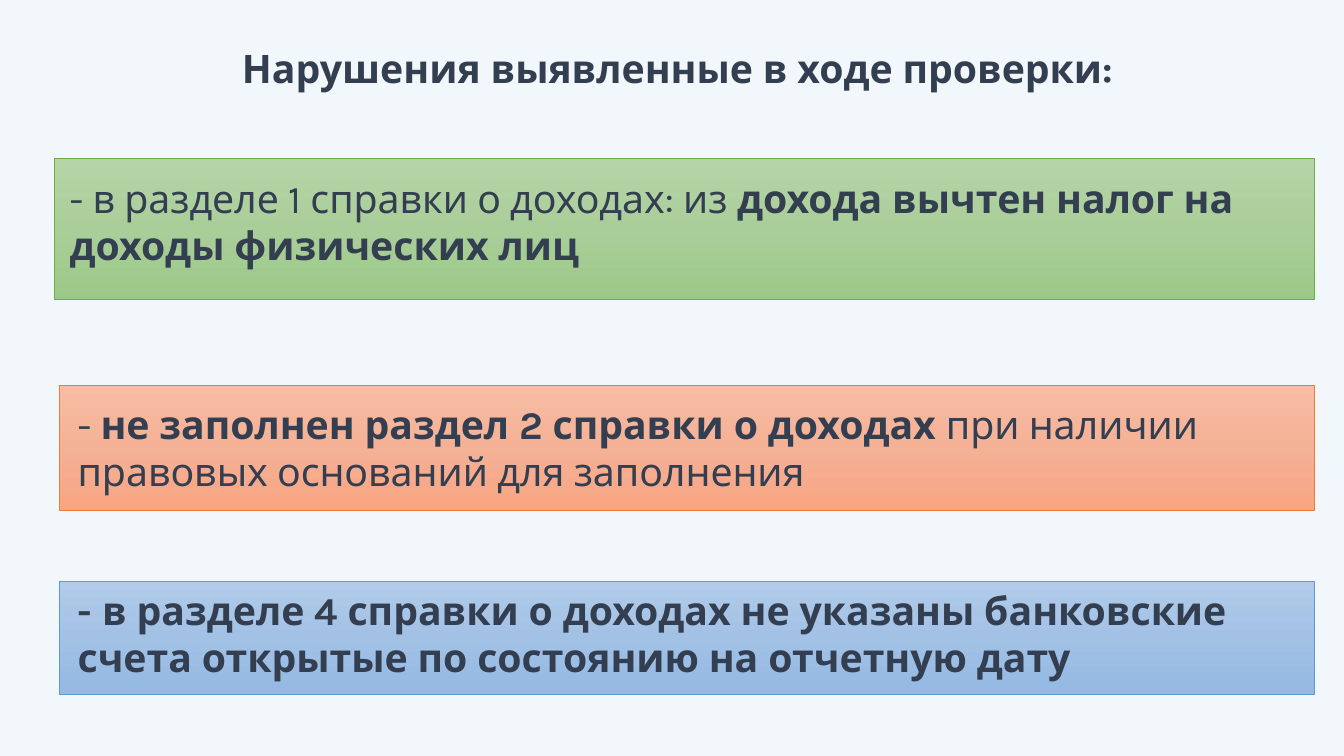
"""Builds the slide about violations found during the check."""
from copy import deepcopy

from pptx import Presentation, util as u
from pptx.dml.color import RGBColor
from pptx.enum import shapes, text

WIDTH, HEIGHT = u.Inches(13.33), u.Inches(7.5)
FONT, SIZE, INK, BACKGROUND = "Karla", 28, "333F50", "F2F7FC"
RIGHT_EDGE = 97.82

TITLE = "Нарушения выявленные в ходе проверки:"
VIOLATIONS = [
    {"area": (4.05, 20.93, 18.67), "insets": (1.13, 2.13, 0.38),
     "stops": ("B5D5A7", "AACE9A", "9CC987"), "border": "70AD47",
     "runs": [("- в разделе 1 справки о доходах: из ", False),
              ("дохода вычтен налог на доходы физических лиц", True)]},
    {"area": (4.43, 50.93, 16.53), "insets": (1.35, 2, 0.75),
     "stops": ("F7BDA5", "F5B196", "F8A582"), "border": "ED7D31",
     "runs": [("- ", False),
              ("не заполнен раздел 2 справки о доходах ", True),
              ("при наличии правовых оснований для заполнения", False)]},
    {"area": (4.43, 76.93, 14.93), "insets": (1.35, 0.67, 0.75),
     "stops": ("B1CBE9", "A3C1E5", "93B9E4"), "border": "5B9BD5",
     "runs": [("- в разделе 4 справки о доходах не указаны банковские "
               "счета открытые по состоянию на отчетную дату", True)]},
]


def across(percent):
    """Return a share of the slide's width."""
    return u.Emu(int(WIDTH * percent / 100))


def down(percent):
    """Return a share of the slide's height."""
    return u.Emu(int(HEIGHT * percent / 100))


def paint(color, value):
    """Set a colour from a hex string."""
    color.rgb = RGBColor.from_string(value)


def write(frame, runs):
    """Write runs of regular and bold text as one left-aligned paragraph."""
    frame.word_wrap = True
    frame.auto_size = text.MSO_AUTO_SIZE.NONE
    frame.vertical_anchor = text.MSO_ANCHOR.TOP
    paragraph = frame.paragraphs[0]
    paragraph.alignment = text.PP_ALIGN.LEFT
    for words, bold in runs:
        run = paragraph.add_run()
        run.text = words
        run.font.name, run.font.size, run.font.bold = FONT, u.Pt(SIZE), bold
        paint(run.font.color, INK)


def fill_gradient(shape, colors):
    """Fill a shape with evenly spaced colours from top to bottom."""
    shape.fill.gradient()
    shape.fill.gradient_angle = 270
    stop_list = shape.fill._fill._gradFill.gsLst
    while len(stop_list) < len(colors):
        stop_list.append(deepcopy(stop_list[0]))
    for index, (stop, value) in enumerate(zip(shape.fill.gradient_stops, colors)):
        stop.position = index / (len(colors) - 1)
        paint(stop.color, value)


def add_title(slide):
    """Place the heading in the title placeholder."""
    title = slide.shapes.title
    title.left, title.top = across(17.25), down(5.2)
    title.width, title.height = across(69.92), down(7.6)
    write(title.text_frame, [(TITLE, True)])


def add_violation(slide, area, insets, stops, border, runs):
    """Add a gradient panel with the text of one violation."""
    left, top, height = area
    panel = slide.shapes.add_shape(
        shapes.MSO_SHAPE.RECTANGLE, across(left), down(top),
        across(RIGHT_EDGE - left), down(height))
    panel.shadow.inherit = False
    fill_gradient(panel, stops)
    paint(panel.line.color, border)
    panel.line.width = u.Pt(0.5)
    frame = panel.text_frame
    frame.margin_left, frame.margin_right = across(insets[0]), across(insets[2])
    frame.margin_top, frame.margin_bottom = down(insets[1]), 0
    write(frame, runs)


def main():
    """Build and save the presentation."""
    presentation = Presentation()
    presentation.slide_width, presentation.slide_height = WIDTH, HEIGHT
    slide = presentation.slides.add_slide(
        presentation.slide_layouts.get_by_name("Title Only"))
    slide.background.fill.solid()
    paint(slide.background.fill.fore_color, BACKGROUND)
    add_title(slide)
    for violation in VIOLATIONS:
        add_violation(slide, **violation)
    presentation.save("out.pptx")


if __name__ == "__main__":
    main()
